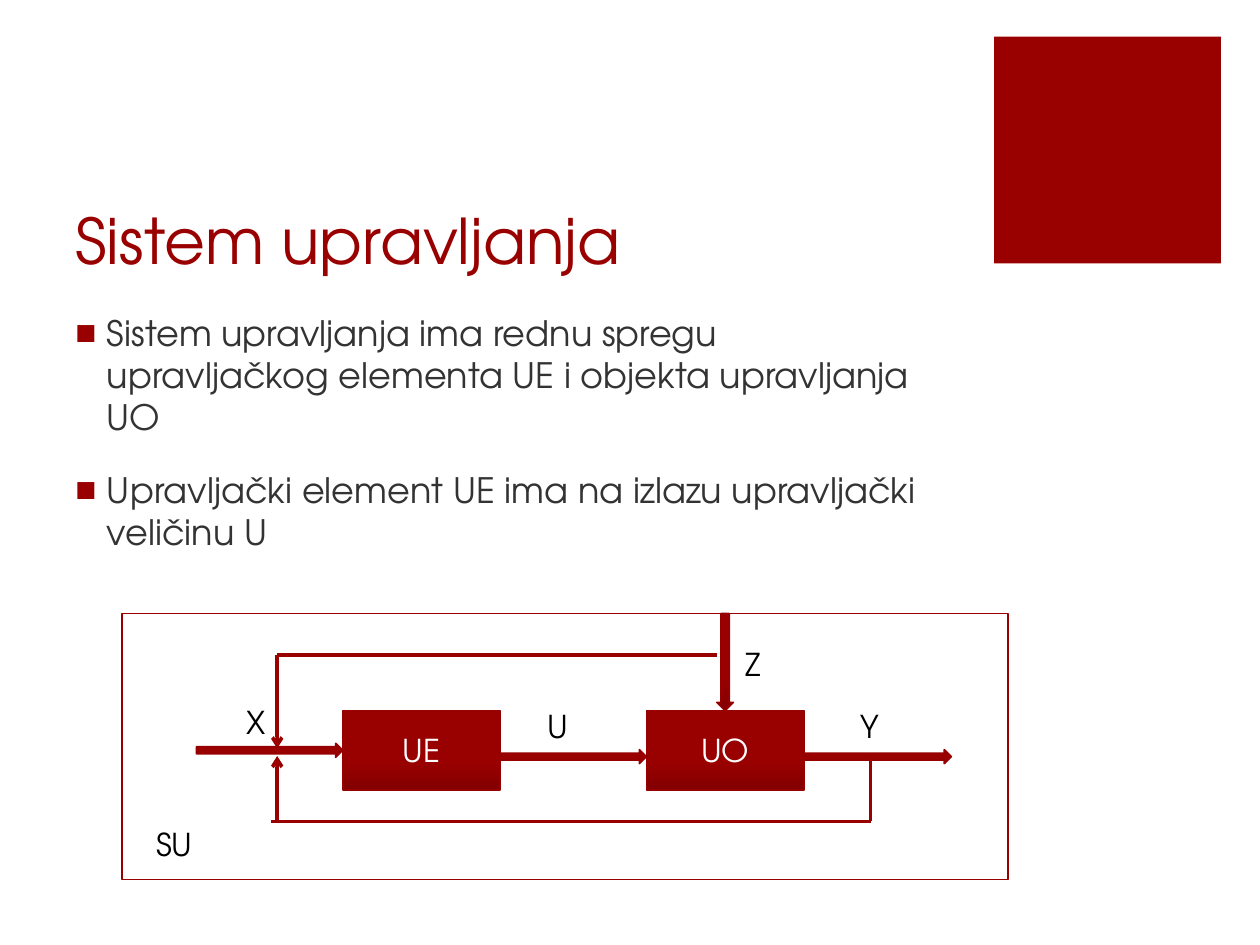
from lxml.etree import SubElement
from pptx import Presentation
from pptx.dml.color import RGBColor
from pptx.enum.shapes import MSO_CONNECTOR, MSO_SHAPE
from pptx.enum.text import MSO_ANCHOR, MSO_AUTO_SIZE, PP_ALIGN
from pptx.oxml.ns import qn
from pptx.util import Inches, Pt

FONT = "TeX Gyre Adventor"
RED, DARK_RED, EDGE = "990000", "830000", "960000"


def rgb(value):
    """Turn a hex string into a colour."""
    return RGBColor.from_string(value)


def add_run(p, text, size, color):
    """Add one formatted run to a paragraph."""
    r = p.add_run()
    r.text = text
    r.font.name = FONT
    r.font.size = Pt(size)
    r.font.color.rgb = rgb(color)


def add_text(s, x, y, w, h, text, size, color, wrap=True, anchor=MSO_ANCHOR.TOP):
    """Add a text box with one paragraph and return its frame."""
    tf = s.shapes.add_textbox(Inches(x), Inches(y), Inches(w), Inches(h)).text_frame
    tf.word_wrap = wrap
    tf.vertical_anchor = anchor
    add_run(tf.paragraphs[0], text, size, color)
    return tf


def add_label(s, x, y, text, w=0.29):
    """Add a signal label that grows with its text."""
    tf = add_text(s, x, y, w, 0.4, text, 18, "000000", wrap=False)
    tf.auto_size = MSO_AUTO_SIZE.SHAPE_TO_FIT_TEXT


def add_bullets(s, x, y, w, h, items):
    """Add a list with square bullets."""
    tf = s.shapes.add_textbox(Inches(x), Inches(y), Inches(w), Inches(h)).text_frame
    tf.word_wrap = True
    for i, item in enumerate(items):
        p = tf.add_paragraph() if i else tf.paragraphs[0]
        p.space_before = Pt(18)
        add_run(p, item, 20, "333333")
        pPr = p._p.get_or_add_pPr()
        pPr.set("marL", str(Inches(0.25)))
        pPr.set("indent", str(-Inches(0.25)))
        color = SubElement(pPr, qn("a:buClr"))
        SubElement(color, qn("a:srgbClr"), val=RED)
        SubElement(pPr, qn("a:buFont"), typeface="Arial")
        SubElement(pPr, qn("a:buChar"), char="■")


def add_shape(s, kind, x, y, w, h):
    """Add a preset shape without shadow, fill or line."""
    sp = s.shapes.add_shape(kind, Inches(x), Inches(y), Inches(w), Inches(h))
    sp.shadow.inherit = False
    sp.fill.background()
    sp.line.fill.background()
    return sp


def outline(sp):
    """Give a shape the thin dark red outline."""
    sp.line.color.rgb = rgb(EDGE)
    sp.line.width = Pt(1)


def add_shaded(s, kind, x, y, w, h):
    """Add an outlined shape that darkens towards its bottom."""
    sp = add_shape(s, kind, x, y, w, h)
    sp.fill.gradient()
    sp.fill.gradient_angle = 90
    for stop, (position, color) in zip(sp.fill.gradient_stops, ((0, DARK_RED), (0.35, RED))):
        stop.position = position
        stop.color.rgb = rgb(color)
    outline(sp)
    return sp


def add_block(s, x, y, text):
    """Add a named block of the control system."""
    tf = add_shaded(s, MSO_SHAPE.RECTANGLE, x, y, 1.25, 0.63).text_frame
    tf.vertical_anchor = MSO_ANCHOR.MIDDLE
    p = tf.paragraphs[0]
    p.alignment = PP_ALIGN.CENTER
    add_run(p, text, 18, "FFFFFF")


def add_line(s, x1, y1, x2, y2, arrow=False):
    """Add a feedback line, with an arrowhead at its end if asked."""
    line = s.shapes.add_connector(
        MSO_CONNECTOR.STRAIGHT, Inches(x1), Inches(y1), Inches(x2), Inches(y2))
    line.line.color.rgb = rgb(RED)
    line.line.width = Pt(2)
    if arrow:
        SubElement(line.line._get_or_add_ln(), qn("a:tailEnd"), type="arrow")
    SubElement(line._element.spPr, qn("a:effectLst"))


def add_diagram(s):
    """Draw the control system with its signals and feedback."""
    outline(add_shape(s, MSO_SHAPE.RECTANGLE, 0.97, 4.87, 7.03, 2.11))
    add_block(s, 2.72, 5.64, "UE")
    add_block(s, 5.13, 5.64, "UO")
    for x, y in ((1.56, 5.9), (3.97, 5.95), (6.39, 5.95)):
        add_shaded(s, MSO_SHAPE.RIGHT_ARROW, x, y, 1.16, 0.11)
    add_shaded(s, MSO_SHAPE.DOWN_ARROW, 5.69, 4.87, 0.13, 0.77)
    for x, y, text in ((1.86, 5.53, "X"), (4.25, 5.56, "U"),
                       (6.73, 5.56, "Y"), (5.82, 5.07, "Z")):
        add_label(s, x, y, text)
    add_label(s, 1.14, 6.5, "SU", w=0.54)
    add_line(s, 2.2, 5.2, 5.69, 5.2)
    add_line(s, 2.2, 5.2, 2.2, 5.94, arrow=True)
    add_line(s, 2.2, 6.52, 2.2, 6, arrow=True)
    add_line(s, 2.15, 6.52, 6.91, 6.52)
    add_line(s, 6.91, 6.52, 6.91, 6)


def main():
    """Build the slide and save it."""
    prs = Presentation()
    prs.slide_width, prs.slide_height = Inches(10), Inches(7.5)
    s = prs.slides.add_slide(prs.slide_layouts[6])
    corner = add_shape(s, MSO_SHAPE.RECTANGLE, 7.89, 0.29, 1.8, 1.8)
    corner.fill.solid()
    corner.fill.fore_color.rgb = rgb(RED)
    add_text(s, 0.5, 1, 7.12, 1.25, "Sistem upravljanja", 36, RED, anchor=MSO_ANCHOR.BOTTOM)
    add_bullets(s, 0.5, 2.42, 7.12, 4.28, (
        "Sistem upravljanja ima rednu spregu upravljačkog elementa UE i objekta upravljanja UO",
        "Upravljački element UE ima na izlazu upravljački veličinu U",
    ))
    add_diagram(s)
    prs.save("out.pptx")


if __name__ == "__main__":
    main()
